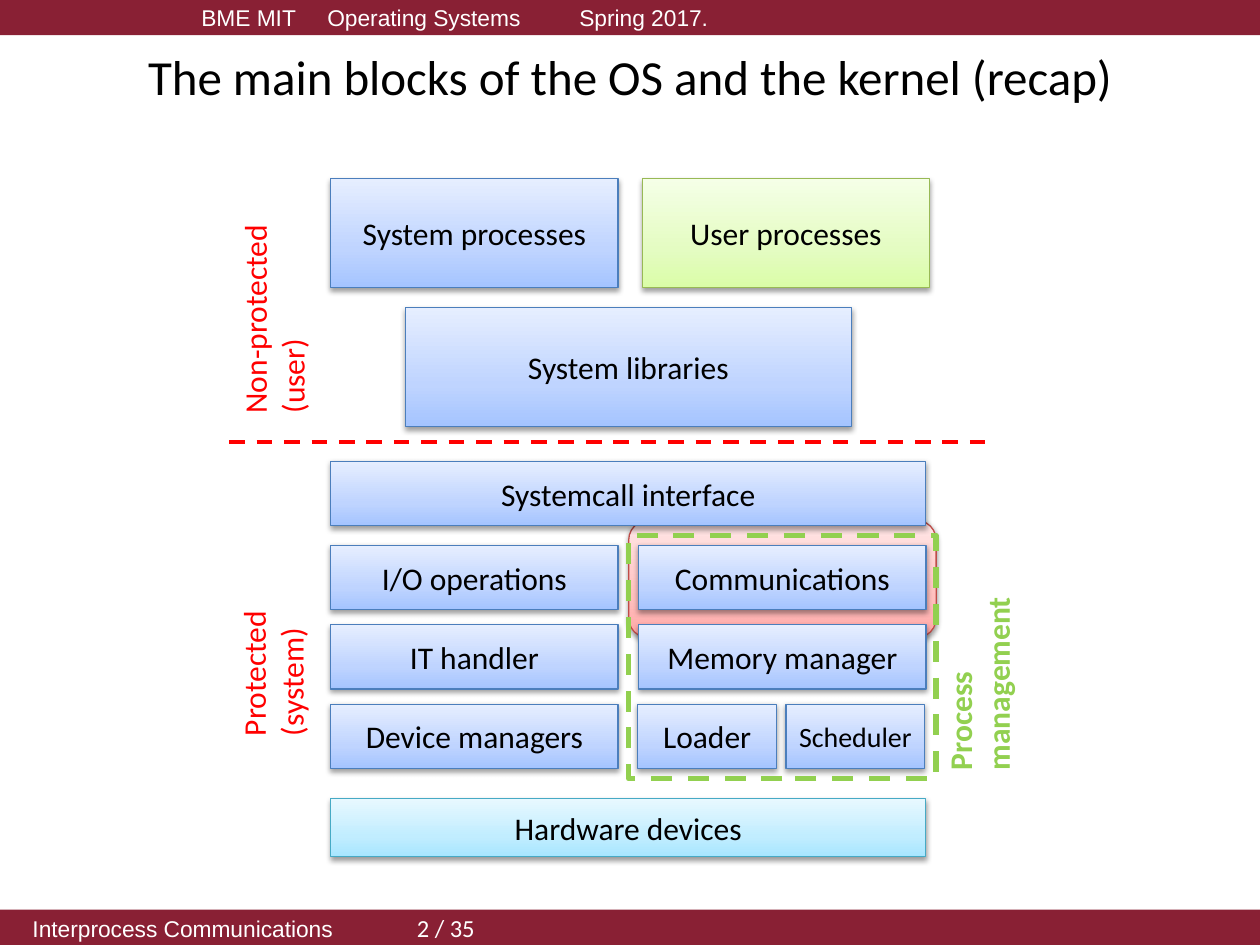
from pptx import Presentation
from pptx.dml.color import RGBColor
from pptx.enum.dml import MSO_LINE
from pptx.enum.shapes import MSO_CONNECTOR, MSO_SHAPE
from pptx.enum.text import MSO_ANCHOR, PP_ALIGN
from pptx.oxml import parse_xml
from pptx.oxml.ns import nsdecls, qn
from pptx.util import Pt

RECT, ROUND = MSO_SHAPE.RECTANGLE, MSO_SHAPE.ROUNDED_RECTANGLE
DASH = MSO_LINE.DASH
MIDDLE, CENTER = MSO_ANCHOR.MIDDLE, PP_ALIGN.CENTER

BLACK = RGBColor(0, 0, 0)
WHITE = RGBColor(0xFF, 0xFF, 0xFF)
RED = RGBColor(0xFF, 0, 0)
GREEN = RGBColor(0x92, 0xD0, 0x50)
MAROON = RGBColor(0x89, 0x20, 0x34)

# Line colour, then gradient colours from bottom to top
STYLES = {
    "blue": (RGBColor(0x4B, 0x7E, 0xBC), ("A4C4FF", "BFD4FF", "E6EEFF")),
    "green": (RGBColor(0x98, 0xB9, 0x55), ("DAFDA7", "E4FCC2", "F5FFE7")),
    "red": (RGBColor(0xBF, 0x4C, 0x48), ("FFA6A5", "FFC0BF", "FFE7E7")),
    "cyan": (RGBColor(0x46, 0xAA, 0xC5), ("A7E6FF", "C1EDFF", "E7F8FF")),
}
STOPS = (0, 35, 100)

W, H, BAND_H = 720, 540, 20.16
TITLE = "The main blocks of the OS and the kernel (recap)"
# Top, indent, runs of (text, size, font)
BANDS = [
    (0, 108, [("BME MIT\tOperating Systems\tSpring 2017.", 13, "Arial")]),
    (H - BAND_H, 11.5, [("Interprocess Communications\t\t ", 13, "Arial"),
                        ("2 / 35", 14, "Calibri")]),
]

LEFT, RIGHT = 189, 365
COL_W, WIDE_W, HALF_W = 164.2, 340, 79.2
ROW_TOP, ROW_STEP, ROW_H = 311.6, 45.4, 36.8
FRAME_X, FRAME_W = 359.3, 175.7

BLOCKS = [
    ("Hardware devices", "cyan", LEFT, 456.4, WIDE_W, 33.2),
    ("System libraries", "blue", 231.6, 175.8, 255, 67.8),
    ("System processes", "blue", LEFT, 102, COL_W, 62.4),
    ("User processes", "green", 367, 102, COL_W, 62.4),
    ("Systemcall interface", "blue", LEFT, 263.6, WIDE_W, ROW_H),
]
# Text, x, width, size
KERNEL_ROWS = [
    [("I/O operations", LEFT, COL_W, 18), ("Communications", RIGHT, COL_W, 18)],
    [("IT handler", LEFT, COL_W, 18), ("Memory manager", RIGHT, COL_W, 18)],
    [("Device managers", LEFT, COL_W, 18), ("Loader", RIGHT - 0.5, HALF_W, 18),
     ("Scheduler", 449.2, HALF_W, 16)],
]
# Text, colour, bold, wrap, box
SIDE_LABELS = [
    ("Non-protected\n(user)", RED, False, False, (131, 127.4, 58.2, 116)),
    ("Protected\n(system)", RED, False, True, (130.4, 337, 58.2, 90.7)),
    ("Process management", GREEN, True, True, (534, 329.8, 58.2, 117.4)),
]


def pts(*values):
    return [Pt(v) for v in values]


def style_run(r, size, color, font="Calibri", bold=False):
    r.font.size, r.font.name, r.font.bold = Pt(size), font, bold
    r.font.color.rgb = color


def add_block(s, style, x, y, w, h, text="", size=18, kind=RECT):
    """Add a gradient-filled block with a soft shadow below it."""
    line, colors = STYLES[style]
    sp = s.shapes.add_shape(kind, *pts(x, y, w, h))
    sp.line.color.rgb = line
    sp.line.width = Pt(0.75)
    stops = "".join(f'<a:gs pos="{pos * 1000}"><a:srgbClr val="{c}"/></a:gs>'
                    for pos, c in zip(STOPS, colors))
    sp.element.spPr.find(qn("a:prstGeom")).addnext(parse_xml(
        f'<a:gradFill {nsdecls("a")} rotWithShape="1"><a:gsLst>{stops}</a:gsLst>'
        '<a:lin ang="16200000" scaled="0"/></a:gradFill>'))
    sp.shadow.inherit = False
    sp.element.spPr.find(qn("a:effectLst")).append(parse_xml(
        f'<a:outerShdw {nsdecls("a")} blurRad="40000" dist="20000" dir="5400000" '
        'rotWithShape="0"><a:srgbClr val="000000"><a:alpha val="38000"/>'
        '</a:srgbClr></a:outerShdw>'))
    if text:
        tf = sp.text_frame
        tf.text, tf.word_wrap, tf.vertical_anchor = text, True, MIDDLE
        p = tf.paragraphs[0]
        p.alignment = CENTER
        style_run(p.runs[0], size, BLACK)


def add_band(s, top, indent, runs):
    sp = s.shapes.add_shape(RECT, *pts(0, top, W, BAND_H))
    sp.shadow.inherit = False
    sp.fill.solid()
    sp.fill.fore_color.rgb = MAROON
    sp.line.fill.background()
    tf = sp.text_frame
    tf.word_wrap, tf.vertical_anchor = True, MIDDLE
    p = tf.paragraphs[0]
    p.alignment = PP_ALIGN.LEFT
    p._p.get_or_add_pPr().set("marL", str(Pt(indent)))
    for text, size, font in runs:
        r = p.add_run()
        r.text = text
        style_run(r, size, WHITE, font)


def add_side_label(s, text, color, bold, wrap, box):
    tf = s.shapes.add_textbox(*pts(*box)).text_frame
    tf.text, tf.word_wrap = text, wrap
    tf._txBody.bodyPr.set("vert", "vert270")
    for p in tf.paragraphs:
        style_run(p.runs[0], 18, color, bold=bold)


def main():
    prs = Presentation()
    prs.slide_width, prs.slide_height = Pt(W), Pt(H)
    s = prs.slides.add_slide(prs.slide_layouts[6])

    for band in BANDS:
        add_band(s, *band)

    tf = s.shapes.add_textbox(*pts(36, 21.6, 648, 44)).text_frame
    tf.text, tf.word_wrap, tf.vertical_anchor = TITLE, True, MIDDLE
    tf.paragraphs[0].alignment = CENTER
    style_run(tf.paragraphs[0].runs[0], 28, BLACK)

    add_block(s, "red", FRAME_X, 297.4, FRAME_W, 67, kind=ROUND)
    for text, style, *box in BLOCKS:
        add_block(s, style, *box, text)
    for i, row in enumerate(KERNEL_ROWS):
        for text, x, w, size in row:
            add_block(s, "blue", x, ROW_TOP + i * ROW_STEP, w, ROW_H, text, size)

    border = s.shapes.add_connector(MSO_CONNECTOR.STRAIGHT,
                                    *pts(131, 252.8, 563, 252.8))
    border.element.spPr.append(parse_xml(f'<a:effectLst {nsdecls("a")}/>'))
    frame = s.shapes.add_shape(RECT, *pts(FRAME_X, 306, FRAME_W, 139))
    frame.shadow.inherit = False
    frame.fill.background()
    for sp, color, width in ((border, RED, 2.25), (frame, GREEN, 3)):
        sp.line.color.rgb = color
        sp.line.width = Pt(width)
        sp.line.dash_style = DASH

    for label in SIDE_LABELS:
        add_side_label(s, *label)

    prs.save("out.pptx")


if __name__ == "__main__":
    main()
